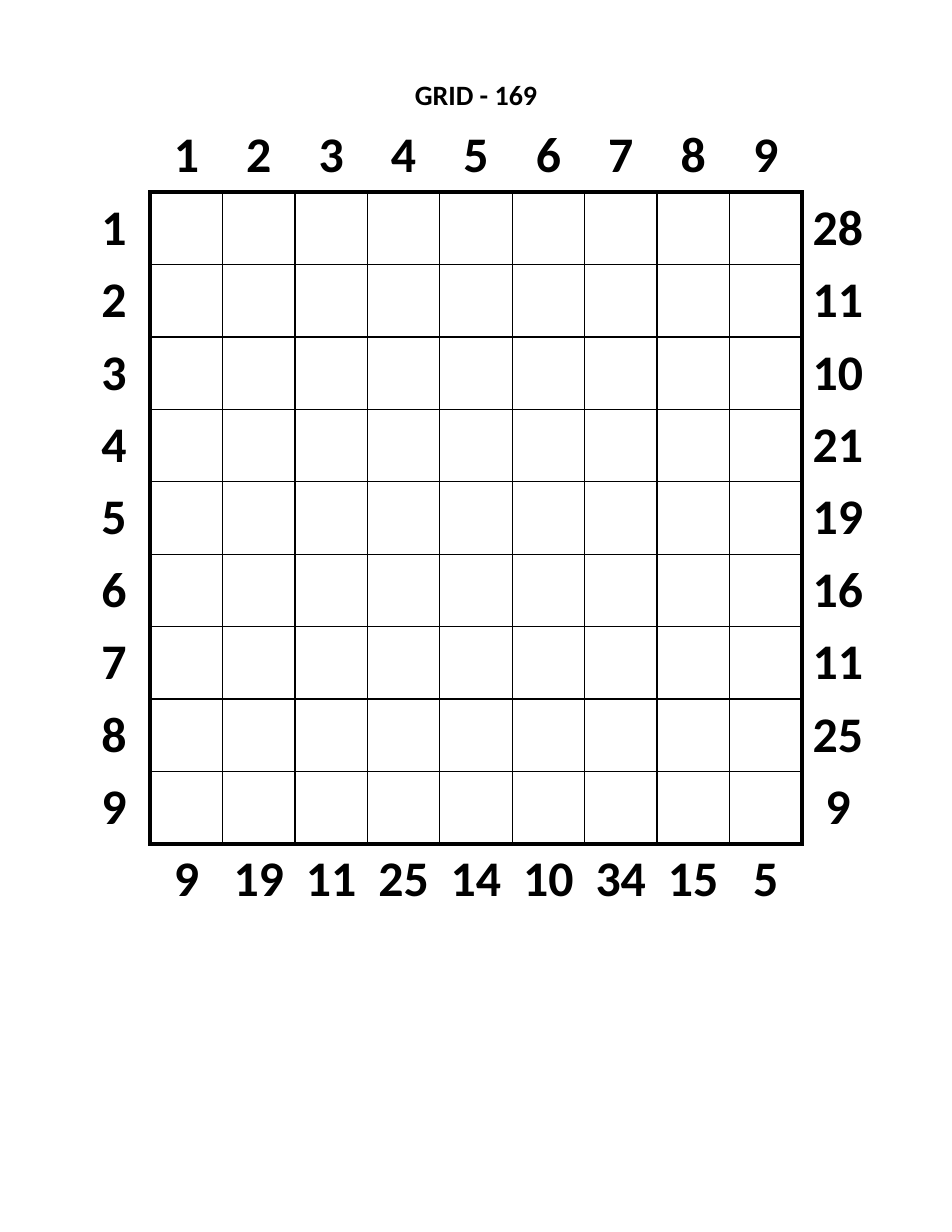
from lxml import etree
from pptx import Presentation
from pptx.dml.color import RGBColor
from pptx.enum import text
from pptx.oxml import ns
from pptx.util import Pt

COLORS = {"ink": "000000", "paper": "FFFFFF"}
FONT = "Calibri"
N = 9
LEFT, TITLE_TOP, GRID_TOP = 50, 50, 77
CELL = 46.55
SIZE = CELL * (N + 2)
ROW_SUMS = [28, 11, 10, 21, 19, 16, 11, 25, 9]
COLUMN_SUMS = [9, 19, 11, 25, 14, 10, 34, 15, 5]
SIDES = {"lnL": (0, -1), "lnR": (0, 1), "lnT": (-1, 0), "lnB": (1, 0)}


def write(tf, value, size):
    tf.margin_left = tf.margin_top = tf.margin_right = tf.margin_bottom = 0
    p = tf.paragraphs[0]
    p.text = str(value)
    p.alignment = text.PP_ALIGN.CENTER
    p.font.name = FONT
    p.font.size = Pt(size)
    p.font.bold = True
    p.font.color.rgb = RGBColor.from_string(COLORS["ink"])


def add_title(s, title):
    box = s.shapes.add_textbox(Pt(LEFT), Pt(TITLE_TOP), Pt(SIZE), Pt(22))
    box.text_frame.word_wrap = True
    write(box.text_frame, title, 18)


def in_grid(row, col):
    return 1 <= row <= N and 1 <= col <= N


def set_borders(cell, row, col):
    """Thin lines inside the grid, a thick frame around it, none elsewhere."""
    tc_pr = cell._tc.get_or_add_tcPr()
    for tag, (dr, dc) in SIDES.items():
        grid_sides = in_grid(row, col) + in_grid(row + dr, col + dc)
        ln = etree.SubElement(tc_pr, ns.qn("a:" + tag))
        if grid_sides == 0:
            etree.SubElement(ln, ns.qn("a:noFill"))
            continue
        ln.set("w", str(Pt(1 if grid_sides == 2 else 3)))
        fill = etree.SubElement(ln, ns.qn("a:solidFill"))
        etree.SubElement(fill, ns.qn("a:srgbClr"), val=COLORS["ink"])


def add_grid(s):
    table = s.shapes.add_table(N + 2, N + 2, Pt(LEFT), Pt(GRID_TOP), Pt(SIZE), Pt(SIZE)).table
    table.first_row = table.horz_banding = False
    for column in table.columns:
        column.width = Pt(CELL)
    numbers = list(range(1, N + 1))
    labels = [["", *numbers, ""]]
    labels += [[n, *[""] * N, total] for n, total in zip(numbers, ROW_SUMS)]
    labels += [["", *COLUMN_SUMS, ""]]
    for r, values in enumerate(labels):
        table.rows[r].height = Pt(CELL)
        for c, value in enumerate(values):
            cell = table.cell(r, c)
            set_borders(cell, r, c)
            cell.fill.solid()
            cell.fill.fore_color.rgb = RGBColor.from_string(COLORS["paper"])
            if value != "":
                cell.margin_left = cell.margin_top = cell.margin_right = cell.margin_bottom = 0
                cell.vertical_anchor = text.MSO_ANCHOR.MIDDLE
                write(cell.text_frame, value, 32)


def main():
    prs = Presentation()
    prs.slide_width, prs.slide_height = Pt(612), Pt(792)
    s = prs.slides.add_slide(prs.slide_layouts[6])
    add_title(s, "GRID - 169")
    add_grid(s)
    prs.save("out.pptx")


if __name__ == "__main__":
    main()
